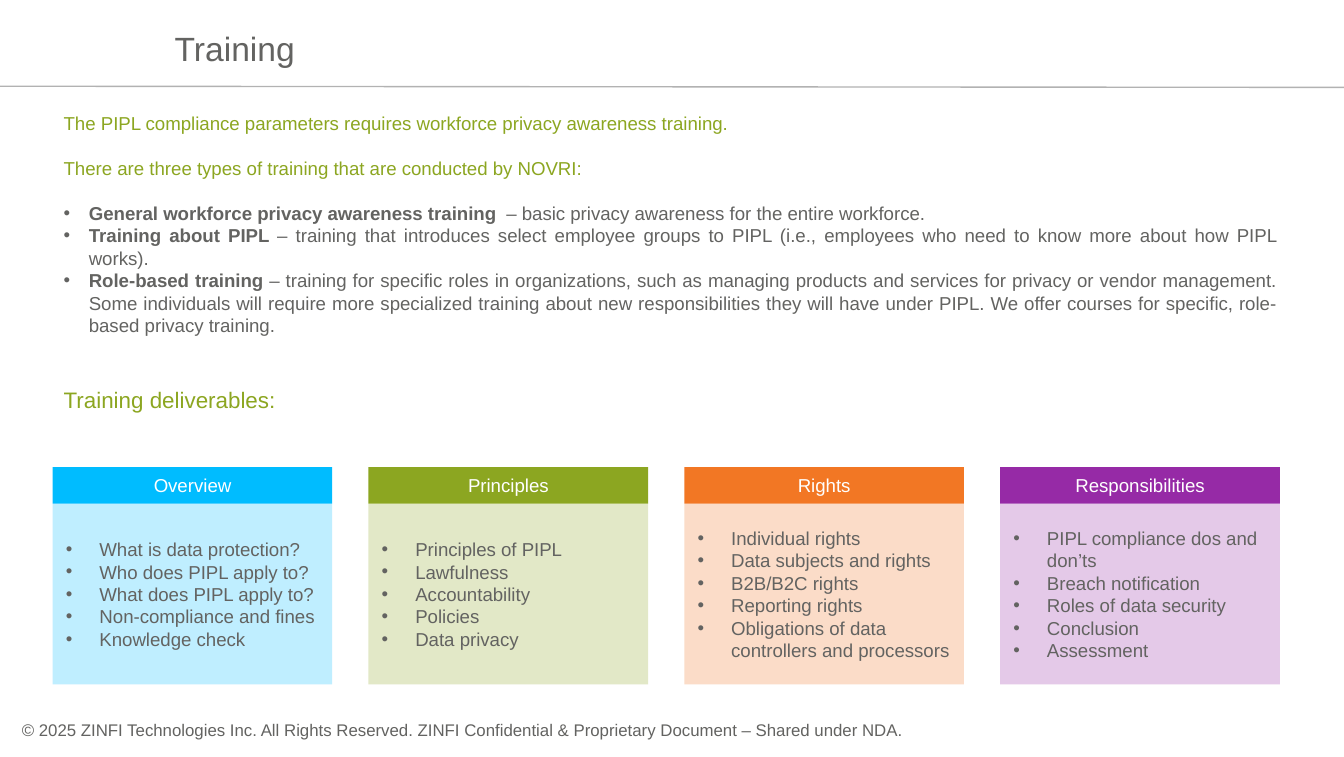
from dataclasses import dataclass

import pptx
import pptx.dml.color
import pptx.enum.shapes
import pptx.enum.text
import pptx.oxml.ns
import pptx.util
from lxml import etree

Pt = pptx.util.Pt
qn = pptx.oxml.ns.qn
ALIGN = pptx.enum.text.PP_ALIGN
ANCHOR = pptx.enum.text.MSO_ANCHOR

FONT = "Arial"
GRAY = "636361"
GREEN = "8CA621"
WHITE = "FFFFFF"
RULE = "B2B2B2"

SLIDE_WIDTH, SLIDE_HEIGHT = 720, 405.38
CARD_LEFT, CARD_STEP, CARD_WIDTH = 28.2, 169.2, 149.8
CARD_TOP, HEADER_HEIGHT, BODY_HEIGHT = 250.1, 19.6, 96.8


@dataclass
class Run:
    text: str
    size: float = 10
    color: str = GRAY
    bold: bool = False


@dataclass
class Para:
    runs: list[Run]
    align: ALIGN = ALIGN.LEFT
    indent: float = 0
    before: float = 0


@dataclass
class Card:
    title: str
    color: str
    items: list[str]


INTRO = [
    Para([Run("The PIPL compliance parameters requires workforce privacy awareness training.",
              color=GREEN)], ALIGN.JUSTIFY),
    Para([Run("There are three types of training that are conducted by NOVRI:",
              color=GREEN)], ALIGN.JUSTIFY, before=12),
    Para([Run("General workforce privacy awareness training ", bold=True),
          Run(" – basic privacy awareness for the entire workforce.")],
         ALIGN.JUSTIFY, indent=13.5, before=12),
    Para([Run("Training about PIPL ", bold=True),
          Run("– training that introduces select employee groups to PIPL (i.e., employees "
              "who need to know more about how PIPL works).")],
         ALIGN.JUSTIFY, indent=13.5),
    Para([Run("Role-based training ", bold=True),
          Run("– training for specific roles in organizations, such as managing products and "
              "services for privacy or vendor management. Some individuals will require more "
              "specialized training about new responsibilities they will have under PIPL. "
              "We offer courses for specific, role-based privacy training.")],
         ALIGN.JUSTIFY, indent=13.5),
    Para([Run("Training deliverables:", 12, GREEN)], ALIGN.JUSTIFY, before=26.6),
]

CARDS = [
    Card("Overview", "00BCFF", [
        "What is data protection?", "Who does PIPL apply to?", "What does PIPL apply to?",
        "Non-compliance and fines", "Knowledge check"]),
    Card("Principles", GREEN, [
        "Principles of PIPL", "Lawfulness", "Accountability", "Policies", "Data privacy"]),
    Card("Rights", "F27724", [
        "Individual rights", "Data subjects and rights", "B2B/B2C rights", "Reporting rights",
        "Obligations of data controllers and processors"]),
    Card("Responsibilities", "962AA6", [
        "PIPL compliance dos and don’ts", "Breach notification", "Roles of data security",
        "Conclusion", "Assessment"]),
]


def rgb(color: str) -> pptx.dml.color.RGBColor:
    return pptx.dml.color.RGBColor.from_string(color)


def add_bullet(p, indent: float) -> None:
    pPr = p._p.get_or_add_pPr()
    pPr.set("marL", str(Pt(indent)))
    pPr.set("indent", str(-Pt(indent)))
    etree.SubElement(pPr, qn("a:buFont"), typeface=FONT)
    etree.SubElement(pPr, qn("a:buChar"), char="•")


def write(tf, paras: list[Para], anchor: ANCHOR) -> None:
    tf.word_wrap = True
    tf.vertical_anchor = anchor
    for i, para in enumerate(paras):
        p = tf.add_paragraph() if i else tf.paragraphs[0]
        if para.indent:
            add_bullet(p, para.indent)
        p.alignment = para.align
        if para.before:
            p.space_before = Pt(para.before)
        for run in para.runs:
            r = p.add_run()
            r.text = run.text
            r.font.name = FONT
            r.font.size = Pt(run.size)
            r.font.bold = run.bold
            r.font.color.rgb = rgb(run.color)


def add_text(s, box: tuple, paras: list[Para], anchor=ANCHOR.TOP, inset: bool = True) -> None:
    tf = s.shapes.add_textbox(*map(Pt, box)).text_frame
    if not inset:
        tf.margin_left = tf.margin_top = tf.margin_right = tf.margin_bottom = 0
    write(tf, paras, anchor)


def add_panel(s, box: tuple, color: str, paras: list[Para], opacity: int = 100) -> None:
    sp = s.shapes.add_shape(pptx.enum.shapes.MSO_SHAPE.RECTANGLE, *map(Pt, box))
    sp.shadow.inherit = False
    sp.fill.solid()
    sp.fill.fore_color.rgb = rgb(color)
    sp.line.fill.background()
    if opacity < 100:
        clr = sp._element.spPr.find(qn("a:solidFill")).find(qn("a:srgbClr"))
        etree.SubElement(clr, qn("a:alpha"), val=str(opacity * 1000))
    write(sp.text_frame, paras, ANCHOR.MIDDLE)


def add_card(s, card: Card, left: float) -> None:
    add_panel(s, (left, CARD_TOP, CARD_WIDTH, HEADER_HEIGHT), card.color,
              [Para([Run(card.title, color=WHITE)], ALIGN.CENTER)])
    add_panel(s, (left, CARD_TOP + HEADER_HEIGHT, CARD_WIDTH, BODY_HEIGHT), card.color,
              [Para([Run(item)], indent=18) for item in card.items], opacity=25)


def add_rule(s, x1: float, y1: float, x2: float, y2: float) -> None:
    line = s.shapes.add_connector(pptx.enum.shapes.MSO_CONNECTOR.STRAIGHT,
                                  Pt(x1), Pt(y1), Pt(x2), Pt(y2))
    line.line.color.rgb = rgb(RULE)
    line.line.width = Pt(0.75)
    etree.SubElement(line._element.spPr, qn("a:effectLst"))


def main() -> None:
    prs = pptx.Presentation()
    prs.slide_width, prs.slide_height = Pt(SLIDE_WIDTH), Pt(SLIDE_HEIGHT)
    s = prs.slides.add_slide(prs.slide_layouts[6])
    add_rule(s, 0, 46.2, SLIDE_WIDTH, 46.8)
    add_text(s, (11.7, 385.6, 520, 10.8), [Para([Run(
        "© 2025 ZINFI Technologies Inc. All Rights Reserved. ZINFI Confidential & "
        "Proprietary Document – Shared under NDA.", 9)])], ANCHOR.BOTTOM, inset=False)
    add_text(s, (93.6, 1.8, 336, 34.6), [Para([Run("Training", 18)])],
             ANCHOR.BOTTOM, inset=False)
    add_text(s, (27, 56.4, 663.5, 181.4), INTRO)
    for i, card in enumerate(CARDS):
        add_card(s, card, CARD_LEFT + i * CARD_STEP)
    prs.save("out.pptx")


if __name__ == "__main__":
    main()
